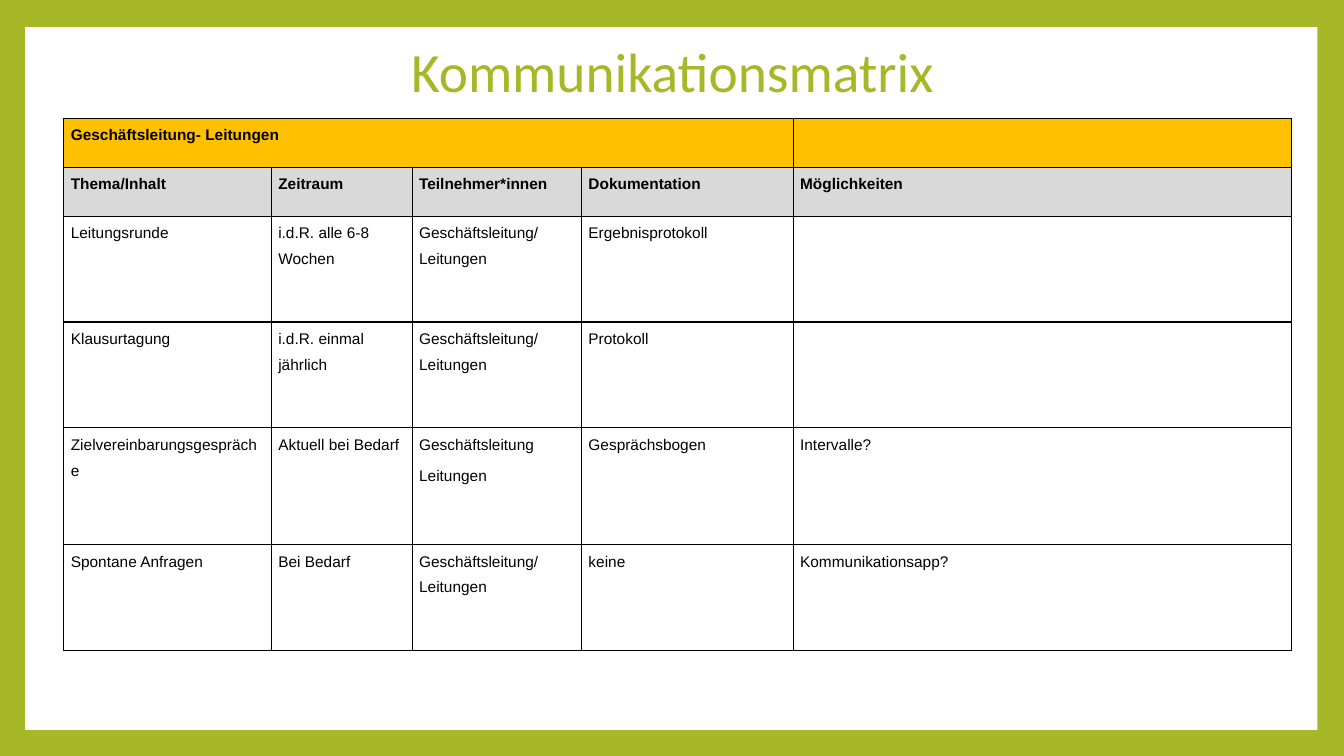
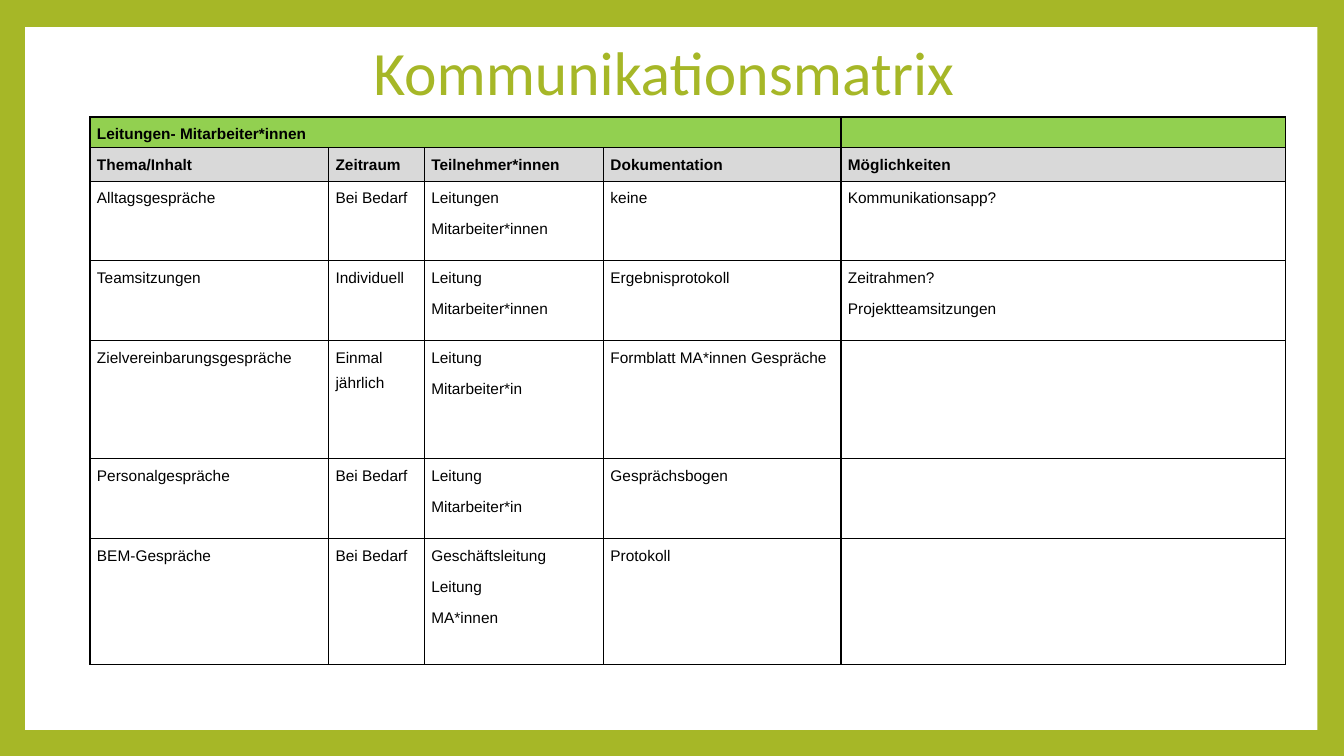
from lxml import etree
from pptx import Presentation
from pptx.dml.color import RGBColor
from pptx.enum.shapes import MSO_SHAPE
from pptx.enum.text import MSO_ANCHOR, MSO_AUTO_SIZE, PP_ALIGN
from pptx.oxml.ns import qn
from pptx.util import Pt

RECTANGLE = MSO_SHAPE.RECTANGLE
MIDDLE = MSO_ANCHOR.MIDDLE
NO_AUTOFIT = MSO_AUTO_SIZE.NONE
CENTER = PP_ALIGN.CENTER

GREEN = "A6B727"
WHITE = "FFFFFF"
BLACK = "000000"
GREY = "D9D9D9"
TITLE = "Kommunikationsmatrix"
HEADINGS = ["Thema/Inhalt", "Zeitraum", "Teilnehmer*innen", "Dokumentation", "Möglichkeiten"]

MATRICES = [
    {
        "title_box": (91.5, 27.4, 777.6, 51),
        "title_size": 39.6,
        "position": (45.6, 84.5),
        "widths": [148.2, 100.6, 121, 151.2, 356],
        "heights": [35, 35, 75.6, 75.6, 83.4, 75.6],
        "accent": "FFC000",
        "group": "Geschäftsleitung- Leitungen",
        "rows": [
            ["Leitungsrunde", "i.d.R. alle 6-8 Wochen", "Geschäftsleitung/ Leitungen", "Ergebnisprotokoll", ""],
            ["Klausurtagung", "i.d.R. einmal jährlich", "Geschäftsleitung/ Leitungen", "Protokoll", ""],
            ["Zielvereinbarungsgespräche", "Aktuell bei Bedarf", "Geschäftsleitung\nLeitungen",
             "Gesprächsbogen", "Intervalle?"],
            ["Spontane Anfragen", "Bei Bedarf", "Geschäftsleitung/ Leitungen", "keine", "Kommunikationsapp?"],
        ],
    },
    {
        "title_box": (85.5, 17.2, 777.6, 74),
        "title_size": 44,
        "position": (64.3, 83.6),
        "widths": [170.4, 68.4, 128, 169.6, 317.8],
        "heights": [21.6, 23.8, 57, 57, 84.4, 57, 90],
        "accent": "92D050",
        "group": "Leitungen- Mitarbeiter*innen",
        "rows": [
            ["Alltagsgespräche", "Bei Bedarf", "Leitungen\nMitarbeiter*innen", "keine", "Kommunikationsapp?"],
            ["Teamsitzungen", "Individuell", "Leitung\nMitarbeiter*innen", "Ergebnisprotokoll",
             "Zeitrahmen?\nProjektteamsitzungen"],
            ["Zielvereinbarungsgespräche", "Einmal jährlich", "Leitung\nMitarbeiter*in",
             "Formblatt MA*innen Gespräche", ""],
            ["Personalgespräche", "Bei Bedarf", "Leitung\nMitarbeiter*in", "Gesprächsbogen", ""],
            ["BEM-Gespräche", "Bei Bedarf", "Geschäftsleitung\nLeitung\nMA*innen", "Protokoll", ""],
        ],
    },
]


def color(value):
    return RGBColor.from_string(value)


def add_borders(cell):
    properties = cell._tc.get_or_add_tcPr()
    for index, side in enumerate(("a:lnL", "a:lnR", "a:lnT", "a:lnB")):
        line = etree.Element(qn(side), w=str(Pt(1)))
        fill = etree.SubElement(line, qn("a:solidFill"))
        etree.SubElement(fill, qn("a:srgbClr"), val=BLACK)
        properties.insert(index, line)


deck = Presentation()
deck.slide_width = Pt(960)
deck.slide_height = Pt(540)
master = deck.slide_master
master.background.fill.solid()
master.background.fill.fore_color.rgb = color(GREEN)
layout = deck.slide_layouts.get_by_name("Title Only")

for number, matrix in enumerate(MATRICES):
    page = deck.slides.add_slide(layout)

    if number == 0:
        panel = page.shapes.add_shape(RECTANGLE, Pt(18), Pt(19.4), Pt(923), Pt(502))
        panel.shadow.inherit = False
        panel.fill.solid()
        panel.fill.fore_color.rgb = color(WHITE)
        panel.line.fill.background()
        panel.element.nvSpPr.cNvPr.id = 20
        master.shapes.element.insert(2, panel.element)

    title = page.shapes.title
    title.left, title.top, title.width, title.height = map(Pt, matrix["title_box"])
    frame = title.text_frame
    frame.text = TITLE
    frame.auto_size = NO_AUTOFIT
    frame.vertical_anchor = MIDDLE
    para = frame.paragraphs[0]
    para.alignment = CENTER
    para.line_spacing = 0.9
    font = para.runs[0].font
    font.name = "Calibri"
    font.size = Pt(matrix["title_size"])
    font.color.rgb = color(GREEN)

    widths, heights = matrix["widths"], matrix["heights"]
    left, top = matrix["position"]
    table = page.shapes.add_table(
        len(heights), len(widths), Pt(left), Pt(top), Pt(sum(widths)), Pt(sum(heights))
    ).table
    table.first_row = False
    table.horz_banding = False
    for column, width in zip(table.columns, widths):
        column.width = Pt(width)
    for row, height in zip(table.rows, heights):
        row.height = Pt(height)
    table.cell(0, 0).merge(table.cell(0, 3))

    contents = [[matrix["group"], "", "", "", ""], HEADINGS] + matrix["rows"]
    fills = [matrix["accent"], GREY] + [WHITE] * len(matrix["rows"])
    for row_index, (texts, fill) in enumerate(zip(contents, fills)):
        for column_index, text in enumerate(texts):
            cell = table.cell(row_index, column_index)
            cell.margin_left = cell.margin_right = Pt(5)
            cell.margin_top = cell.margin_bottom = Pt(0)
            cell.fill.solid()
            cell.fill.fore_color.rgb = color(fill)
            add_borders(cell)
            if not text:
                continue
            cell.text_frame.text = text
            for para in cell.text_frame.paragraphs:
                para.line_spacing = 1.5
                para.space_before = para.space_after = Pt(2)
                font = para.runs[0].font
                font.name = "Arial"
                font.size = Pt(11)
                font.bold = row_index < 2
                font.color.rgb = color(BLACK)

deck.save("out.pptx")
